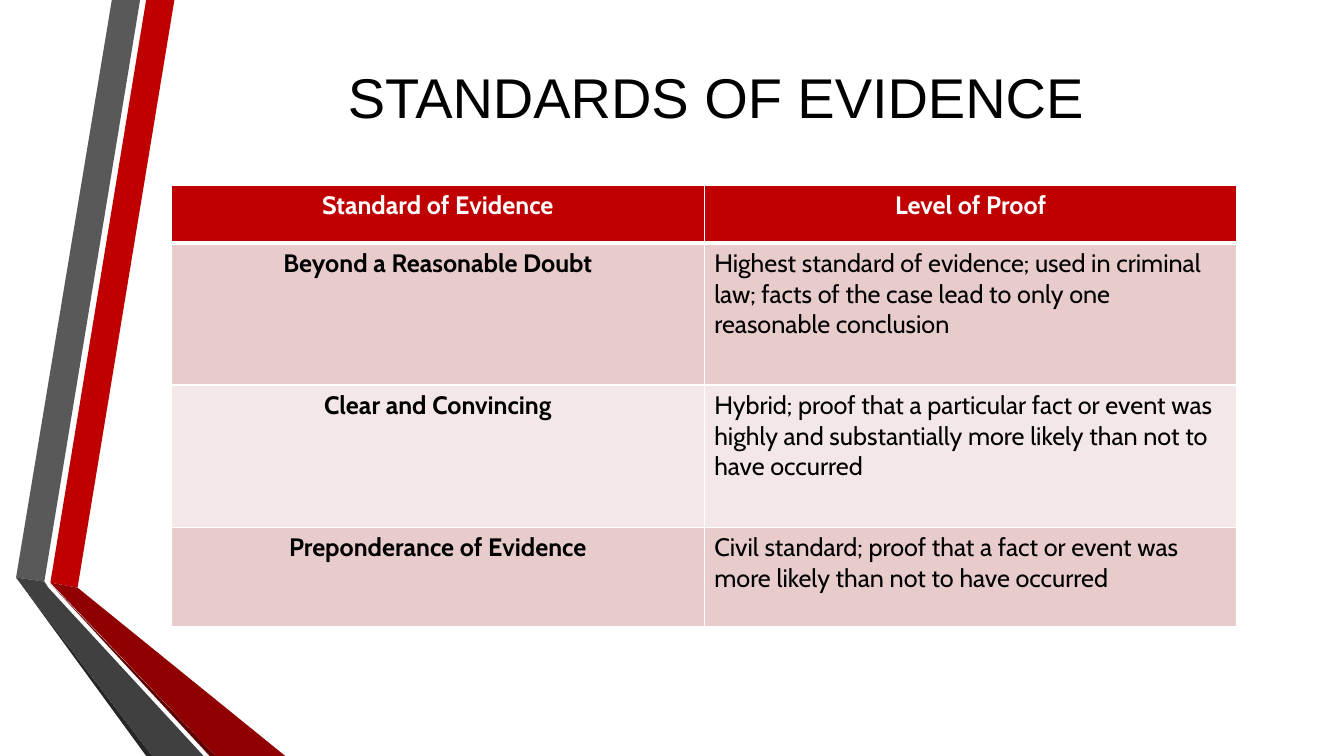
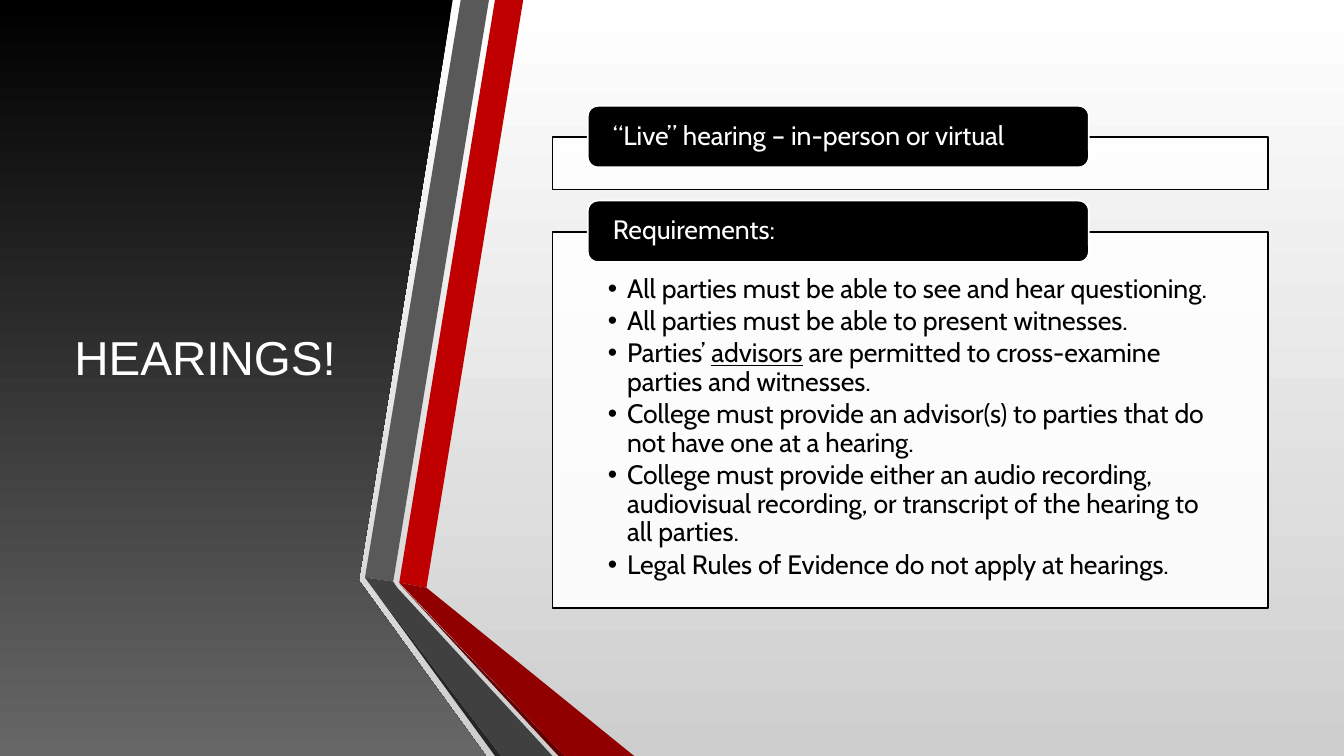
"""Build two slides on evidence standards and hearings."""
import pptx
import pptx.dml.color
import pptx.enum.shapes
import pptx.enum.text
import pptx.oxml
import pptx.oxml.ns
import pptx.util

Inches = pptx.util.Inches
Pt = pptx.util.Pt
qn = pptx.oxml.ns.qn
ALIGN = pptx.enum.text.PP_ALIGN
ANCHOR = pptx.enum.text.MSO_ANCHOR
PRESET = pptx.enum.shapes.MSO_SHAPE

COLORS = {
    "black": "000000", "white": "FFFFFF", "silver": "CECECE", "slate": "676767",
    "red": "C00000", "red_fold": "900000", "red_edge": "600000",
    "gray": "595959", "gray_fold": "404040", "gray_edge": "262626",
    "row_dark": "E8CCCC", "row_light": "F4E7E7",
}
TITLE_FONT = "Arial"
TEXT_FONT = "Cabin"

RIBBON = [
    ("red", [(0.5, 5.78), (0.77, 5.83), (1.73, 0), (1.45, 0)]),
    ("gray", [(1.39, 0), (1.11, 0), (0.16, 5.73), (0.44, 5.77)]),
    ("gray_edge", [(0.16, 5.73), (1.45, 7.5), (1.51, 7.5)]),
    ("red_edge", [(0.5, 5.79), (2.08, 7.5), (2.14, 7.5)]),
    ("red_fold", [(0.5, 5.78), (2.14, 7.5), (2.83, 7.5), (0.77, 5.83)]),
    ("gray_fold", [(2.02, 7.5), (0.48, 5.83), (0.44, 5.77), (0.16, 5.73), (1.51, 7.5)]),
]
PANEL = [(0, 0), (4.49, 0), (3.56, 5.75), (3.56, 5.76), (4.82, 7.5), (0, 7.5)]

STANDARDS = [
    ("Standard of Evidence", "Level of Proof"),
    ("Beyond a Reasonable Doubt",
     "Highest standard of evidence; used in criminal law; facts of the case lead "
     "to only one reasonable conclusion"),
    ("Clear and Convincing",
     "Hybrid; proof that a particular fact or event was highly and substantially "
     "more likely than not to have occurred"),
    ("Preponderance of Evidence",
     "Civil standard; proof that a fact or event was more likely than not to have occurred"),
]
ROW_HEIGHTS = [0.57, 1.41, 1.41, 0.99]

REQUIREMENTS = [
    ["All parties must be able to see and hear questioning."],
    ["All parties must be able to present witnesses."],
    ["Parties’ ", "advisors", " are permitted to cross-examine parties and witnesses."],
    ["College must provide an advisor(s) to parties that do not have one at a hearing."],
    ["College must provide either an audio recording, audiovisual recording, "
     "or transcript of the hearing to all parties."],
    ["Legal Rules of Evidence do not apply at hearings."],
]
UNDERLINED = "advisors"
BOX_LEFT, BOX_WIDTH = 5.48, 7.1


def rgb(color):
    """Return the named colour."""
    return pptx.dml.color.RGBColor.from_string(COLORS[color])


def fill_solid(fill, color):
    """Fill with one named colour."""
    fill.solid()
    fill.fore_color.rgb = rgb(color)


def fill_gradient(fill, top, bottom):
    """Fill with a gradient running from top to bottom."""
    fill.gradient()
    fill.gradient_angle = 270
    for stop, color in zip(fill.gradient_stops, (top, bottom)):
        stop.color.rgb = rgb(color)


def style_font(paragraph, size, color, name=TEXT_FONT, bold=False):
    """Set the font of a paragraph."""
    font = paragraph.font
    font.name, font.size, font.bold = name, Pt(size), bold
    font.color.rgb = rgb(color)


def place(shape, left, top, width, height):
    """Move and size a shape."""
    shape.left, shape.top = Inches(left), Inches(top)
    shape.width, shape.height = Inches(width), Inches(height)


def set_insets(frame, left, top, right, bottom):
    """Set the inner margins of a text frame."""
    frame.margin_left, frame.margin_top = Inches(left), Inches(top)
    frame.margin_right, frame.margin_bottom = Inches(right), Inches(bottom)


def add_outline(slide, points, shift=0):
    """Add a closed borderless outline, moved right by shift."""
    corners = [(Inches(x + shift), Inches(y)) for x, y in points]
    builder = slide.shapes.build_freeform(*corners[0], scale=1.0)
    builder.add_line_segments(corners[1:], close=True)
    outline = builder.convert_to_shape()
    outline.shadow.inherit = False
    outline.line.fill.background()
    return outline


def add_ribbon(slide, shift=0):
    """Add the folded red and gray bands."""
    for color, points in RIBBON:
        fill_solid(add_outline(slide, points, shift).fill, color)


def set_title(slide, text, bounds, size, color):
    """Fill the title placeholder and bring it to the front."""
    title = slide.shapes.title
    place(title, *bounds)
    frame = title.text_frame
    frame.text = text
    frame.auto_size = pptx.enum.text.MSO_AUTO_SIZE.NONE
    frame.vertical_anchor = ANCHOR.MIDDLE
    frame.paragraphs[0].alignment = ALIGN.CENTER
    style_font(frame.paragraphs[0], size, color, TITLE_FONT)
    slide.shapes._spTree.append(title._element)


def set_borders(cell, bottom):
    """Give a cell white borders."""
    properties = cell._tc.get_or_add_tcPr()
    for side, width in (("L", 1), ("R", 1), ("T", 1), ("B", bottom)):
        border = pptx.oxml.parse_xml(
            f'<a:ln{side} {pptx.oxml.ns.nsdecls("a")} w="{Pt(width)}"><a:solidFill>'
            f'<a:srgbClr val="{COLORS["white"]}"/></a:solidFill></a:ln{side}>')
        properties.append(border)


def add_standards_table(slide):
    """Add the table of evidence standards."""
    table = slide.shapes.add_table(
        len(STANDARDS), 2, Inches(1.7), Inches(1.84),
        Inches(10.57), Inches(sum(ROW_HEIGHTS))).table
    for row_index, (height, texts) in enumerate(zip(ROW_HEIGHTS, STANDARDS)):
        table.rows[row_index].height = Inches(height)
        header = row_index == 0
        background = "red" if header else ("row_light", "row_dark")[row_index % 2]
        for column, text in enumerate(texts):
            cell = table.cell(row_index, column)
            set_borders(cell, 3 if header else 1)
            fill_solid(cell.fill, background)
            cell.text = text
            emphasis = header or column == 0
            paragraph = cell.text_frame.paragraphs[0]
            paragraph.alignment = ALIGN.CENTER if emphasis else ALIGN.LEFT
            style_font(paragraph, 18, "white" if header else "black", bold=emphasis)


def style_box(box):
    """Give a box a translucent white fill and a black line."""
    fill_solid(box.fill, "white")
    white = box._element.spPr.find(qn("a:solidFill")).find(qn("a:srgbClr"))
    white.append(pptx.oxml.parse_xml(
        f'<a:alpha {pptx.oxml.ns.nsdecls("a")} val="90000"/>'))
    box.line.color.rgb = rgb("black")
    box.line.width = Pt(1.25)


def add_heading_tab(slide, text, box_top):
    """Add a black heading tab across the top edge of a box."""
    tab = slide.shapes.add_shape(
        PRESET.ROUNDED_RECTANGLE, Inches(5.83), Inches(box_top - 0.31),
        Inches(4.97), Inches(0.61))
    tab.shadow.inherit = False
    fill_solid(tab.fill, "black")
    tab.line.color.rgb = rgb("white")
    tab.line.width = Pt(1.25)
    frame = tab.text_frame
    frame.text = text
    frame.word_wrap = True
    frame.vertical_anchor = ANCHOR.MIDDLE
    set_insets(frame, 0.22, 0, 0.22, 0)
    paragraph = frame.paragraphs[0]
    paragraph.alignment = ALIGN.LEFT
    paragraph.line_spacing = 0.9
    style_font(paragraph, 19, "white")


def add_bullet(paragraph):
    """Give a paragraph a hanging bullet."""
    properties = paragraph._p.get_or_add_pPr()
    properties.set("marL", str(Inches(0.19)))
    properties.set("indent", str(-Inches(0.19)))
    properties.append(pptx.oxml.parse_xml(
        f'<a:buChar {pptx.oxml.ns.nsdecls("a")} char="•"/>'))


def set_requirements(slide, box_top):
    """Fill the body placeholder with the hearing requirements."""
    body = slide.placeholders[1]
    place(body, BOX_LEFT, box_top, BOX_WIDTH, 3.73)
    style_box(body)
    frame = body.text_frame
    frame.auto_size = pptx.enum.text.MSO_AUTO_SIZE.NONE
    frame.vertical_anchor = ANCHOR.TOP
    set_insets(frame, 0.55, 0.43, 0.55, 0.15)
    for index, pieces in enumerate(REQUIREMENTS):
        paragraph = frame.add_paragraph() if index else frame.paragraphs[0]
        add_bullet(paragraph)
        paragraph.line_spacing = 0.9
        paragraph.space_before = Pt(0)
        paragraph.space_after = Pt(2.5)
        style_font(paragraph, 19, "black")
        for piece in pieces:
            run = paragraph.add_run()
            run.text = piece
            if piece == UNDERLINED:
                run.font.underline = True


def build_standards(deck):
    """Build the slide on standards of evidence."""
    slide = deck.slides.add_slide(deck.slide_layouts[5])
    fill_solid(slide.background.fill, "white")
    add_ribbon(slide)
    set_title(slide, "STANDARDS OF EVIDENCE", (1.62, 0.42, 10.96, 1.07), 40, "black")
    add_standards_table(slide)


def build_hearings(deck):
    """Build the slide on hearings."""
    slide = deck.slides.add_slide(deck.slide_layouts[1])
    fill_gradient(slide.background.fill, "white", "silver")
    fill_gradient(add_outline(slide, PANEL).fill, "black", "slate")
    set_title(slide, "HEARINGS!", (0.59, 0.75, 2.89, 5.58), 34, "white")
    add_ribbon(slide, 3.46)
    live_top, requirements_top = 1.36, 2.3
    live_box = slide.shapes.add_shape(
        PRESET.RECTANGLE, Inches(BOX_LEFT), Inches(live_top),
        Inches(BOX_WIDTH), Inches(0.52))
    live_box.shadow.inherit = False
    style_box(live_box)
    add_heading_tab(slide, "“Live” hearing – in-person or virtual", live_top)
    set_requirements(slide, requirements_top)
    add_heading_tab(slide, "Requirements:", requirements_top)


def main():
    """Build and save the presentation."""
    deck = pptx.Presentation()
    deck.slide_width, deck.slide_height = Inches(13.33), Inches(7.5)
    build_standards(deck)
    build_hearings(deck)
    deck.save("out.pptx")


if __name__ == "__main__":
    main()
